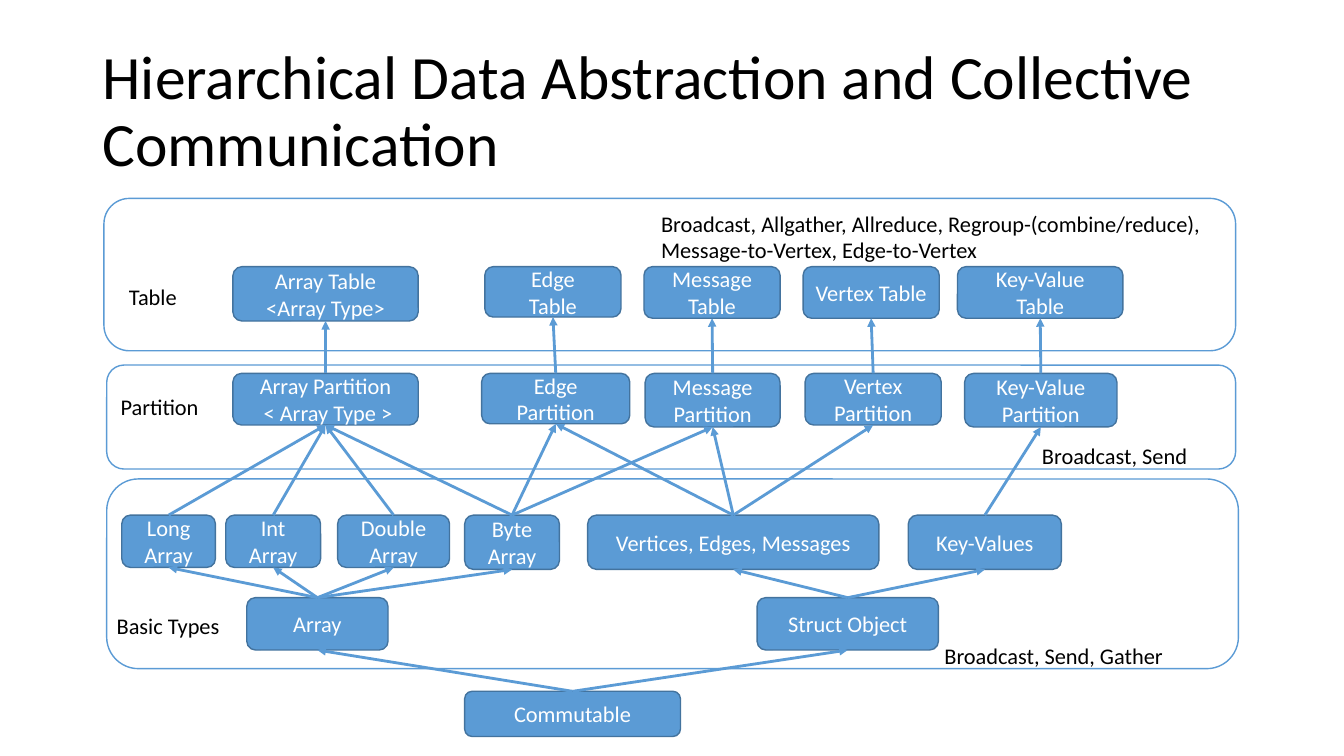
import pptx
import pptx.util
import pptx.dml.color
import pptx.enum.shapes
import pptx.enum.text
import pptx.oxml
import pptx.oxml.ns
from dataclasses import dataclass
from lxml import etree

Cm = pptx.util.Cm
Pt = pptx.util.Pt
RGB = pptx.dml.color.RGBColor.from_string
ALIGN = pptx.enum.text.PP_ALIGN
MIDDLE = pptx.enum.text.MSO_ANCHOR.MIDDLE
ROUNDED = pptx.enum.shapes.MSO_SHAPE.ROUNDED_RECTANGLE
TOP, BOTTOM = 0, 2


@dataclass(frozen=True)
class Theme:
    font: str = "Calibri"
    blue: str = "5B9BD5"
    edge: str = "43739E"
    white: str = "FFFFFF"
    black: str = "000000"
    title: int = 44
    body: int = 16


theme = Theme()


def add_box(box, fill, line):
    sp = s.shapes.add_shape(ROUNDED, *map(Cm, box))
    sp.shadow.inherit = False
    sp.fill.solid()
    sp.fill.fore_color.rgb = RGB(fill)
    sp.line.color.rgb = RGB(line)
    sp.line.width = Pt(1)
    return sp


def write(tf, text, size, color, align):
    tf.word_wrap = True
    tf.text = text
    for p in tf.paragraphs:
        p.alignment = align
        p.font.name = theme.font
        p.font.size = Pt(size)
        p.font.color.rgb = RGB(color)


prs = pptx.Presentation()
prs.slide_width = Cm(33.87)
prs.slide_height = Cm(19.05)
s = prs.slides.add_slide(prs.slide_layouts[5])

title = s.shapes.title
title.left, title.top, title.width, title.height = map(Cm, (2.33, 1.01, 29.21, 3.68))
write(title.text_frame, "Hierarchical Data Abstraction and Collective Communication",
      theme.title, theme.black, ALIGN.LEFT)
title.text_frame.vertical_anchor = MIDDLE
title.text_frame.paragraphs[0].line_spacing = 0.9

bands = [
    (2.69, 9.2, 28.45, 2.62),
    (2.62, 5, 28.52, 3.84),
    (2.69, 12.07, 28.52, 4.78),
]
for band in bands:
    add_box(band, theme.white, theme.blue)

rows = [
    (6.72, [
        ("array table", "Array Table <Array Type>", 5.87, 4.67, 1.37),
        ("edge table", "Edge\nTable", 12.22, 3.43, 1.27),
        ("message table", "Message Table", 16.23, 3.43, 1.3),
        ("vertex table", "Vertex Table", 20.24, 3.43, 1.3),
        ("key table", "Key-Value Table", 24.13, 4.17, 1.3),
    ]),
    (9.41, [
        ("array partition", "Array Partition\v < Array Type >", 5.87, 4.67, 1.3),
        ("edge partition", "Edge Partition", 12.14, 3.73, 1.27),
        ("message partition", "Message Partition", 16.26, 3.4, 1.35),
        ("vertex partition", "Vertex Partition", 20.29, 3.43, 1.3),
        ("key partition", "Key-Value Partition", 24.31, 3.84, 1.35),
    ]),
    (12.98, [
        ("long", "Long Array", 3.07, 2.36, 1.32),
        ("int", "Int Array", 5.69, 2.39, 1.32),
        ("double", "Double Array", 8.51, 2.82, 1.32),
        ("byte", "Byte Array", 11.71, 2.39, 1.37),
        ("vertices", "Vertices, Edges, Messages", 14.81, 7.34, 1.37),
        ("key-values", "Key-Values", 22.89, 3.86, 1.37),
    ]),
    (15.06, [
        ("array", "Array", 6.22, 3.56, 1.32),
        ("struct", "Struct Object", 19.08, 4.57, 1.32),
    ]),
    (17.42, [("commutable", "Commutable", 11.71, 5.44, 1.14)]),
]
nodes = {}
for top, row in rows:
    for key, text, left, width, height in row:
        sp = add_box((left, top, width, height), theme.blue, theme.edge)
        write(sp.text_frame, text, theme.body, theme.white, ALIGN.CENTER)
        sp.text_frame.vertical_anchor = MIDDLE
        nodes[key] = sp

links = {
    "commutable": ["array", "struct"],
    "array": ["long", "int", "double", "byte"],
    "struct": ["vertices", "key-values"],
    "long": ["array partition"],
    "int": ["array partition"],
    "double": ["array partition"],
    "byte": ["array partition", "edge partition", "message partition"],
    "vertices": ["edge partition", "message partition", "vertex partition"],
    "key-values": ["key partition"],
}
for kind in ("array", "edge", "message", "vertex", "key"):
    links[f"{kind} partition"] = [f"{kind} table"]

for source, targets in links.items():
    for target in targets:
        line = s.shapes.add_connector(pptx.enum.shapes.MSO_CONNECTOR.STRAIGHT, 0, 0, 0, 0)
        line.begin_connect(nodes[source], TOP)
        line.end_connect(nodes[target], BOTTOM)
        line.line.color.rgb = RGB(theme.blue)
        line.line.width = Pt(2)
        ln = line.line._get_or_add_ln()
        etree.SubElement(ln, pptx.oxml.ns.qn("a:tailEnd"), type="triangle")
        etree.SubElement(line._element.spPr, pptx.oxml.ns.qn("a:effectLst"))

labels = [
    ("Broadcast, Send, Gather", 23.55, 16.05, 7.19, 0.69),
    ("Broadcast, Allgather, Allreduce, Regroup-(combine/reduce),\n"
     "Message-to-Vertex, Edge-to-Vertex", 16.41, 5.16, 14.53, 1.63),
    ("Broadcast, Send", 26.01, 11.02, 5.13, 0.69),
    ("Table", 3, 7.01, 3.89, 0.69),
    ("Partition", 2.79, 9.78, 3.89, 0.69),
    ("Basic Types", 2.69, 15.29, 3.89, 0.69),
]
for text, *box in labels:
    tb = s.shapes.add_textbox(*map(Cm, box))
    write(tb.text_frame, text, theme.body, theme.black, ALIGN.LEFT)

prs.save("out.pptx")
